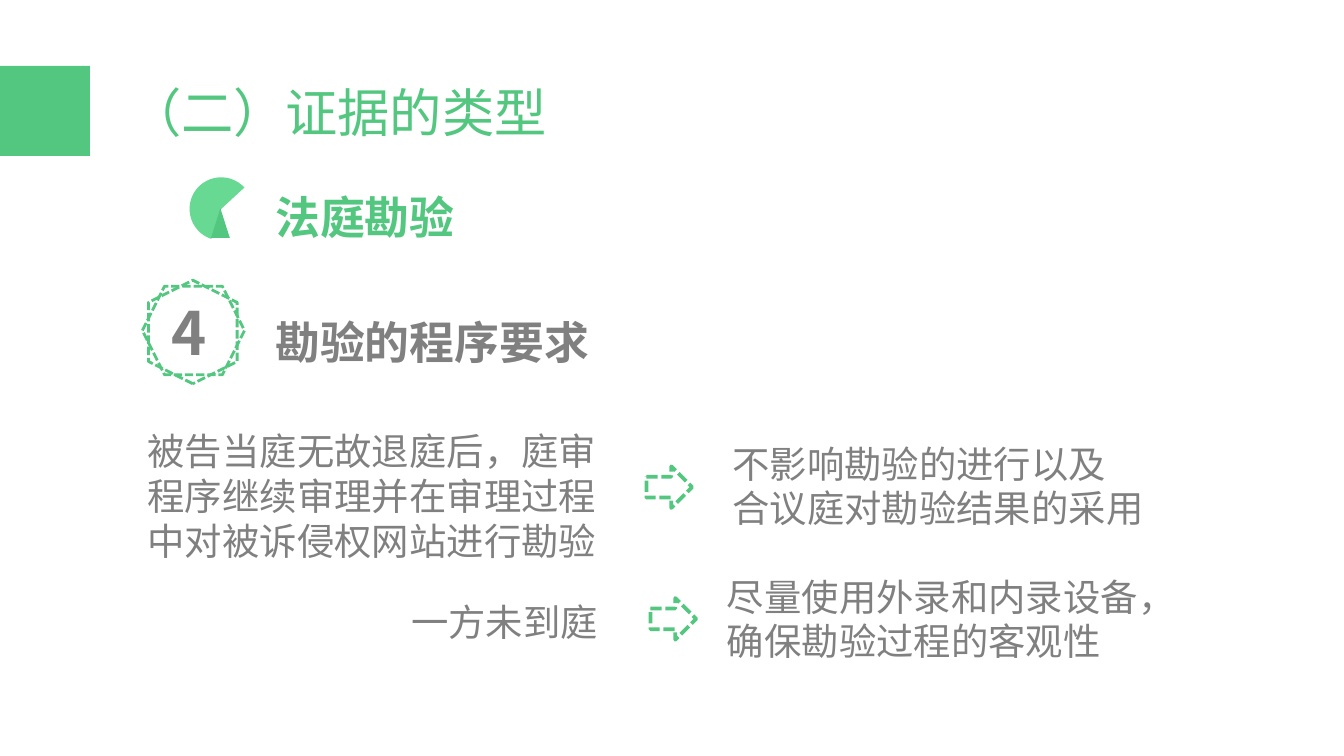
from pptx import Presentation
from pptx.dml.color import RGBColor
from pptx.enum.dml import MSO_LINE
from pptx.enum.shapes import MSO_SHAPE
from pptx.enum.text import MSO_ANCHOR, MSO_AUTO_SIZE, PP_ALIGN
from pptx.oxml.ns import qn
from pptx.util import Inches, Pt

GREEN = RGBColor(0x53, 0xC7, 0x80)
LIGHT_GREEN = RGBColor(0x67, 0xD9, 0x93)
GRAY = RGBColor(0x80, 0x80, 0x80)
FONT = "Noto Sans CJK SC"
LINE_RATIO = 1.2
DASH = MSO_LINE.SQUARE_DOT
TITLE_ONLY = 5

TITLE = {"size": Pt(28), "color": GREEN, "bold": False}
TOPIC = {"size": Pt(24), "color": GREEN, "bold": True}
SUBTOPIC = {"size": Pt(24), "color": GRAY, "bold": True}
NUMBER = {"size": Pt(32), "color": GRAY, "bold": True}
BODY = {"size": Pt(20), "color": GRAY, "bold": False}
FRAME = {
    "word_wrap": True,
    "auto_size": MSO_AUTO_SIZE.NONE,
    "vertical_anchor": MSO_ANCHOR.TOP,
}


def place(shape, left, top, width, height):
    box = {"left": left, "top": top, "width": width, "height": height}
    for side, length in box.items():
        setattr(shape, side, Inches(length))


def write(shape, lines, style):
    """Fill a text shape with one paragraph per line."""
    frame = shape.text_frame
    for name, value in FRAME.items():
        setattr(frame, name, value)
    for index, line in enumerate(lines):
        paragraph = frame.paragraphs[0] if index == 0 else frame.add_paragraph()
        paragraph.alignment = PP_ALIGN.LEFT
        paragraph.line_spacing = Pt(style["size"].pt * LINE_RATIO)
        run = paragraph.add_run()
        run.text = line
        font = run.font
        for name, value in {"name": FONT, "size": style["size"], "bold": style["bold"]}.items():
            setattr(font, name, value)
        font.color.rgb = style["color"]
        east_asian = run._r.get_or_add_rPr().makeelement(qn("a:ea"), {"typeface": FONT})
        run._r.rPr.find(qn("a:latin")).addnext(east_asian)


def add_text(shapes, box, lines, style):
    write(shapes.add_textbox(*map(Inches, box)), lines, style)


def add_solid(shapes, preset, box, color):
    shape = shapes.add_shape(preset, *map(Inches, box))
    shape.shadow.inherit = False
    shape.fill.solid()
    shape.fill.fore_color.rgb = color
    shape.line.fill.background()
    return shape


def add_dashed(shapes, preset, box, weight):
    shape = shapes.add_shape(preset, *map(Inches, box))
    shape.shadow.inherit = False
    shape.fill.background()
    shape.line.color.rgb = GREEN
    shape.line.width = Pt(weight)
    shape.line.dash_style = DASH
    return shape


def add_header(slide, left, top):
    add_solid(slide.shapes, MSO_SHAPE.RECTANGLE, (left, top, 0.67, 0.67), GREEN)
    title = slide.shapes.title
    place(title, left + 0.86, top + 0.06, 5.78, 0.57)
    write(title, ["（二）证据的类型"], TITLE)


def add_topic(slide, left, top):
    icon = slide.shapes.add_group_shape().shapes
    disc = add_solid(icon, MSO_SHAPE.PIE, (left, top, 0.47, 0.47), LIGHT_GREEN)
    disc.adjustments[0] = 36.45
    disc.adjustments[1] = 162
    disc.rotation = 47.4
    add_solid(icon, MSO_SHAPE.ISOSCELES_TRIANGLE,
              (left + 0.16, top + 0.23, 0.14, 0.22), GREEN)
    add_text(slide.shapes, (left + 0.54, top + 0.04, 5.51, 0.5), ["法庭勘验"], TOPIC)


def add_subtopic(slide, left, top):
    badge = slide.shapes.add_group_shape().shapes
    add_dashed(badge, MSO_SHAPE.HEXAGON, (left + 0.01, top, 0.76, 0.66), 1.5)
    turned = add_dashed(badge, MSO_SHAPE.HEXAGON, (left, top + 0.01, 0.77, 0.66), 1.5)
    turned.rotation = 270
    add_text(badge, (left + 0.13, top + 0.02, 0.41, 0.64), ["4"], NUMBER)
    add_text(slide.shapes, (left + 0.9, top + 0.16, 7.78, 0.5), ["勘验的程序要求"], SUBTOPIC)


def add_rule(slide, situation, situation_box, arrow_at, outcome, outcome_box):
    """A situation, an arrow and the outcome that follows."""
    add_text(slide.shapes, situation_box, [situation], BODY)
    add_dashed(slide.shapes, MSO_SHAPE.RIGHT_ARROW, (*arrow_at, 0.34, 0.31), 2)
    add_text(slide.shapes, outcome_box, outcome, BODY)


def main():
    deck = Presentation()
    deck.slide_width = Inches(10)
    deck.slide_height = deck.slide_width * 9 // 16
    slide = deck.slides.add_slide(deck.slide_layouts[TITLE_ONLY])
    add_header(slide, 0, 0.49)
    add_topic(slide, 1.41, 1.32)
    add_subtopic(slide, 1.05, 2.13)
    add_rule(slide, "被告当庭无故退庭后，庭审程序继续审理并在审理过程中对被诉侵权网站进行勘验",
             (1, 3.14, 3.79, 1.11), (4.81, 3.47),
             ["不影响勘验的进行以及", "合议庭对勘验结果的采用"], (5.35, 3.23, 3.48, 0.77))
    add_rule(slide, "一方未到庭", (2.96, 4.41, 1.89, 0.44), (4.84, 4.45),
             ["尽量使用外录和内录设备，", "确保勘验过程的客观性"], (5.31, 4.22, 3.88, 0.77))
    deck.save("out.pptx")


if __name__ == "__main__":
    main()
